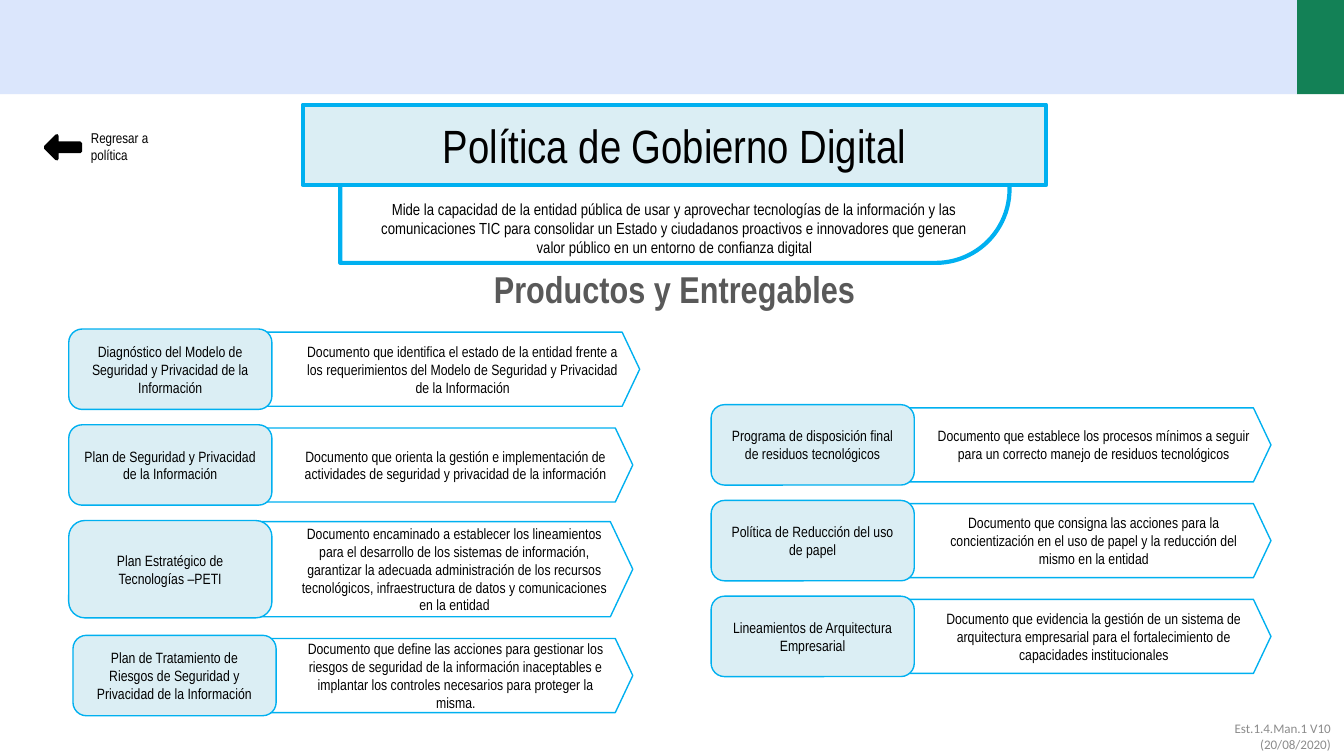
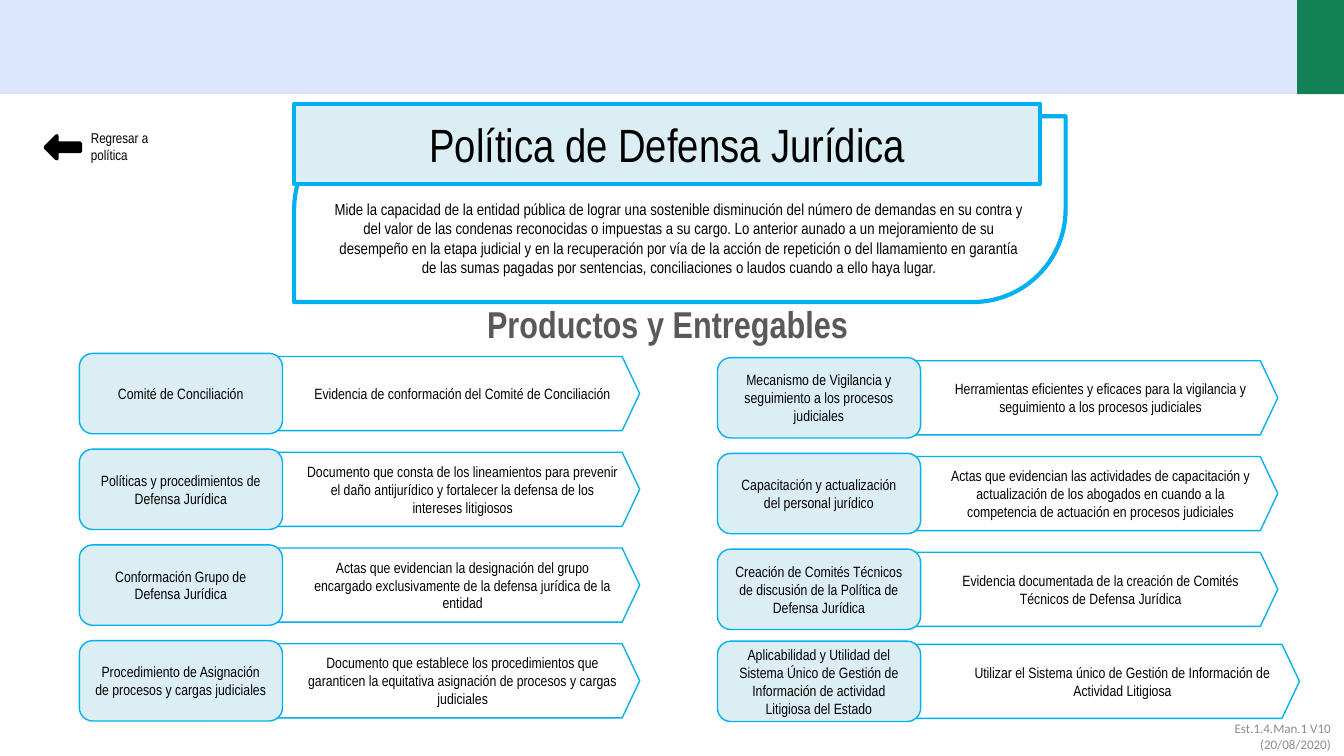
from lxml import etree
from pptx import Presentation
from pptx.dml.color import RGBColor
from pptx.enum import shapes as kinds, text as t
from pptx.oxml import parse_xml
from pptx.oxml.ns import qn
from pptx.util import Cm, Pt

WIDTH, HEIGHT = 25.4, 14.29
BAND_HEIGHT, BAND_SPLIT = 1.78, 24.51
GREEN, LAVENDER, CYAN, PALE = "138156", "DBE6FC", "00B0F0", "DBEEF4"
BLACK, DARK_GRAY, GRAY = "000000", "595959", "8C8C8C"

# Lengths in centimetres
BOX_WIDTH, BOX_HEIGHT = 3.84, 1.52
ARROW_WIDTH, ARROW_HEIGHT = 7.26, 1.4
ROW_PITCH = 1.81
SUMMARY_TOP = 3.77
DRAWING = "http://schemas.openxmlformats.org/drawingml/2006/main"

HEADING = "Productos y Entregables"
BACK = "Regresar a política"
FOOTER = "Est.1.4.Man.1 V10 (20/08/2020)"

# Each row: product, description, and where it departs from its column
POLICIES = [
    {
        "title": "Política de Gobierno Digital",
        "title_at": (5.72, 1.98, 14.05, 1.52),
        "summary": "Mide la capacidad de la entidad pública de usar y aprovechar tecnologías de la "
                   "información y las comunicaciones TIC para consolidar un Estado y ciudadanos "
                   "proactivos e innovadores que generan valor público en un entorno de confianza "
                   "digital",
        "frame_at": (6.43, 2.18, 12.65, 2.79),
        "heading_at": (3.3, 4.93, 18.9, 1.12),
        "columns": [
            {"left": 1.3, "arrow_left": 4.7, "top": 6.22, "rows": [
                ("Diagnóstico del Modelo de Seguridad y Privacidad de la Información",
                 "Documento que identifica el estado de la entidad frente a los requerimientos del "
                 "Modelo de Seguridad y Privacidad de la Información", {"arrow_left": 4.83}),
                ("Plan de Seguridad y Privacidad de la Información",
                 "Documento que orienta la gestión e implementación de actividades de seguridad y "
                 "privacidad de la información", {}),
                ("Plan Estratégico de Tecnologías –PETI",
                 "Documento encaminado a establecer los lineamientos para el desarrollo de los "
                 "sistemas de información, garantizar la adecuada administración de los recursos "
                 "tecnológicos, infraestructura de datos y comunicaciones en la entidad",
                 {"box_height": 1.84, "arrow_height": 1.8}),
                ("Plan de Tratamiento de Riesgos de Seguridad y Privacidad de la Información",
                 "Documento que define las acciones para gestionar los riesgos de seguridad de la "
                 "información inaceptables e implantar los controles necesarios para proteger la "
                 "misma.", {"left": 1.38, "top": 12.01}),
            ]},
            {"left": 13.44, "arrow_left": 16.76, "top": 7.65, "rows": [
                ("Programa de disposición final de residuos tecnológicos",
                 "Documento que establece los procesos mínimos a seguir para un correcto manejo de "
                 "residuos tecnológicos", {}),
                ("Política de Reducción del uso de papel",
                 "Documento que consigna las acciones para la concientización en el uso de papel y "
                 "la reducción del mismo en la entidad", {}),
                ("Lineamientos de Arquitectura Empresarial",
                 "Documento que evidencia la gestión de un sistema de arquitectura empresarial "
                 "para el fortalecimiento de capacidades institucionales", {}),
            ]},
        ],
    },
    {
        "title": "Política de Defensa Jurídica",
        "title_at": (5.56, 1.96, 14.1, 1.52),
        "summary": "Mide la capacidad de la entidad pública de lograr una sostenible disminución "
                   "del número de demandas en su contra y del valor de las condenas reconocidas o "
                   "impuestas a su cargo. Lo anterior aunado a un mejoramiento de su desempeño en "
                   "la etapa judicial y en la recuperación por vía de la acción de repetición o "
                   "del llamamiento en garantía de las sumas pagadas por sentencias, "
                   "conciliaciones o laudos cuando a ello haya lugar.",
        "frame_at": (5.56, 2.2, 14.58, 3.51),
        "heading_at": (3.17, 5.59, 18.9, 1.12),
        "columns": [
            {"left": 1.5, "arrow_left": 4.83, "top": 6.68, "rows": [
                ("Comité de Conciliación",
                 "Evidencia de conformación del Comité de Conciliación", {}),
                ("Políticas y procedimientos de Defensa Jurídica",
                 "Documento que consta de los lineamientos para prevenir el daño antijurídico y "
                 "fortalecer la defensa de los intereses litigiosos", {}),
                ("Conformación Grupo de Defensa Jurídica",
                 "Actas que evidencian la designación del grupo encargado exclusivamente de la "
                 "defensa jurídica de la entidad", {}),
                ("Procedimiento de Asignación de procesos y cargas judiciales",
                 "Documento que establece los procedimientos que garanticen la equitativa "
                 "asignación de procesos y cargas judiciales", {}),
            ]},
            {"left": 13.56, "arrow_left": 16.89, "top": 6.76, "rows": [
                ("Mecanismo de Vigilancia y seguimiento a los procesos judiciales",
                 "Herramientas eficientes y eficaces para la vigilancia y seguimiento a los "
                 "procesos judiciales", {}),
                ("Capacitación y actualización del personal jurídico",
                 "Actas que evidencian las actividades de capacitación y actualización de los "
                 "abogados en cuando a la competencia de actuación en procesos judiciales", {}),
                ("Creación de Comités Técnicos de discusión de la Política de Defensa Jurídica",
                 "Evidencia documentada de la creación de Comités Técnicos de Defensa Jurídica",
                 {}),
                ("Aplicabilidad y Utilidad del Sistema Único de Gestión de Información de "
                 "actividad Litigiosa del Estado",
                 "Utilizar el Sistema único de Gestión de Información de Actividad Litigiosa",
                 {"arrow_left": 17.3, "top": 12.12}),
            ]},
        ],
    },
]


def color(value):
    return RGBColor.from_string(value)


def place(shape, at):
    shape.left, shape.top, shape.width, shape.height = map(Cm, at)


def paint(shape, fill=None, line=None, line_width=0.75):
    if fill:
        shape.fill.solid()
        shape.fill.fore_color.rgb = color(fill)
    else:
        shape.fill.background()
    if line:
        shape.line.color.rgb = color(line)
        shape.line.width = Pt(line_width)
    else:
        shape.line.fill.background()


def write(shape, words, size=8, ink=BLACK, font="Arial Narrow", bold=False, align="CENTER",
          anchor="MIDDLE", inset=0.2, top_inset=0.1, indent=0):
    frame = shape.text_frame
    frame.word_wrap = True
    frame.auto_size = t.MSO_AUTO_SIZE.NONE
    frame.vertical_anchor = t.MSO_ANCHOR[anchor]
    frame.margin_left = frame.margin_right = Cm(inset)
    frame.margin_top, frame.margin_bottom = Cm(top_inset), Cm(0.1)
    paragraph = frame.paragraphs[0]
    paragraph.alignment = t.PP_ALIGN[align]
    if indent:
        properties = paragraph._p.get_or_add_pPr()
        properties.set("marL", str(Cm(indent)))
        properties.set("indent", "0")
    run = paragraph.add_run()
    run.text = words
    run.font.size, run.font.bold, run.font.name = Pt(size), bold, font
    run.font.color.rgb = color(ink)
    return run


def add_shape(shapes, kind, at, adjustments=(), **look):
    shape = shapes.add_shape(kinds.MSO_SHAPE[kind], *map(Cm, at))
    shape.shadow.inherit = False
    for index, value in enumerate(adjustments):
        shape.adjustments[index] = value
    paint(shape, **look)
    return shape


def add_text(shapes, at, words, **format):
    return write(shapes.add_textbox(*map(Cm, at)), words, inset=0.25, **format)


def add_text_shadow(run):
    effects = parse_xml(
        f'<a:effectLst xmlns:a="{DRAWING}">'
        '<a:outerShdw blurRad="38100" dist="38100" dir="5400000" algn="tl">'
        '<a:srgbClr val="000000"><a:alpha val="40000"/></a:srgbClr>'
        '</a:outerShdw></a:effectLst>')
    run.font._element.find(qn("a:solidFill")).addnext(effects)


def move_bands_to_layout(slide):
    """Draw the top bands and hand them to the layout, so that every slide shows them."""
    bands = [((BAND_SPLIT, 0, WIDTH - BAND_SPLIT, BAND_HEIGHT), GREEN),
             ((0, 0, BAND_SPLIT, BAND_HEIGHT), LAVENDER)]
    for index, (at, fill) in enumerate(bands):
        band = add_shape(slide.shapes, "RECTANGLE", at, fill=fill)
        slide.slide_layout.shapes.element.insert(2 + index, band.element)


def add_header(slide, policy):
    left, top, width, height = policy["frame_at"]
    frame = add_shape(slide.shapes, "ROUND_2_DIAG_RECTANGLE", policy["frame_at"], (0.5, 0),
                      line=CYAN, line_width=2.25)
    corner = 0.146 * height  # the rounded corner already pushes the text in by this much
    write(frame, policy["summary"], size=8.6, anchor="TOP",
          top_inset=SUMMARY_TOP - top - corner)

    title = slide.shapes.title
    place(title, policy["title_at"])
    geometry = etree.fromstring(
        f'<a:prstGeom xmlns:a="{DRAWING}" prst="roundRect">'
        '<a:avLst><a:gd name="adj" fmla="val 50000"/></a:avLst></a:prstGeom>')
    title.element.spPr.find(qn("a:xfrm")).addnext(geometry)
    paint(title, PALE, CYAN, 2.25)
    write(title, policy["title"], size=25)
    frame.element.addnext(title.element)


def add_column(slide, column):
    for index, (product, description, changes) in enumerate(column["rows"]):
        row = {"left": column["left"], "arrow_left": column["arrow_left"],
               "top": column["top"] + index * ROW_PITCH,
               "box_height": BOX_HEIGHT, "arrow_height": ARROW_HEIGHT, **changes}
        arrow_top = row["top"] + (row["box_height"] - row["arrow_height"]) / 2
        arrow = add_shape(slide.shapes, "PENTAGON",
                          (row["arrow_left"], arrow_top, ARROW_WIDTH, row["arrow_height"]),
                          (0.236,), line=CYAN)
        write(arrow, description, indent=0.74)
        box = add_shape(slide.shapes, "ROUNDED_RECTANGLE",
                        (row["left"], row["top"], BOX_WIDTH, row["box_height"]),
                        fill=PALE, line=CYAN)
        write(box, product)


def add_back_button(slide):
    group = slide.shapes.add_group_shape()
    arrow = add_shape(group.shapes, "RIGHT_ARROW", (0.86, 2.57, 0.66, 0.43), (0.357, 0.5),
                      fill=BLACK, line=BLACK, line_width=2)
    arrow.element.spPr.find(qn("a:xfrm")).set("flipH", "1")
    add_text(group.shapes, (1.47, 2.34, 2.01, 0.91), BACK, size=7.6, align="LEFT", anchor="TOP")


def main():
    presentation = Presentation()
    presentation.slide_width, presentation.slide_height = Cm(WIDTH), Cm(HEIGHT)
    title_only = presentation.slide_layouts[5]
    for number, policy in enumerate(POLICIES):
        slide = presentation.slides.add_slide(title_only)
        if number == 0:
            move_bands_to_layout(slide)
        add_header(slide, policy)
        for column in policy["columns"]:
            add_column(slide, column)
        heading = add_text(slide.shapes, policy["heading_at"], HEADING, size=20,
                           ink=DARK_GRAY, bold=True, anchor="TOP")
        add_text_shadow(heading)
        add_back_button(slide)
        add_text(slide.shapes, (21.87, 13.54, 3.53, 0.76), FOOTER, size=7, ink=GRAY,
                 font="Calibri", align="RIGHT")
    presentation.save("out.pptx")


if __name__ == "__main__":
    main()
